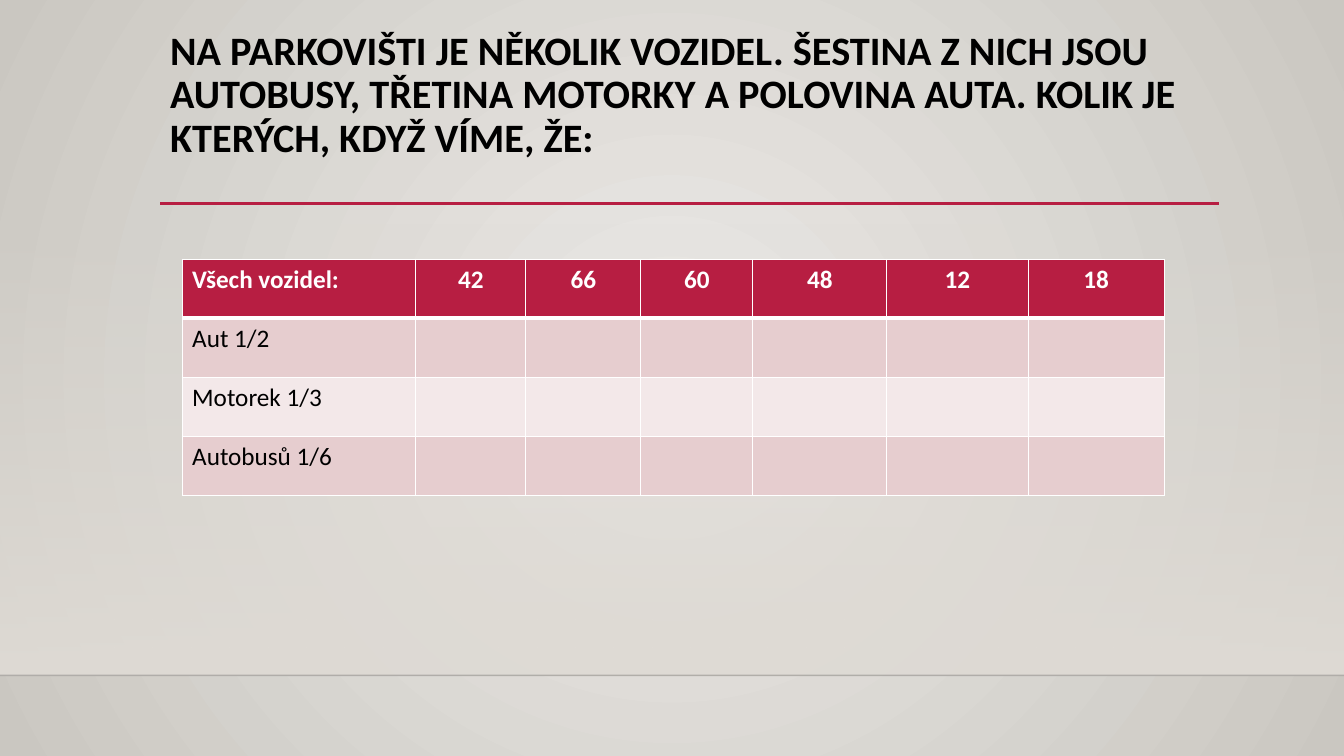
"""Build a slide with a word problem about vehicles in a car park and a table to fill in."""
from pptx import Presentation
from pptx.dml.color import RGBColor
from pptx.enum.shapes import MSO_CONNECTOR, MSO_SHAPE
from pptx.enum.text import MSO_ANCHOR, PP_ALIGN
from pptx.oxml import parse_xml
from pptx.oxml.ns import nsdecls, qn
from pptx.oxml.xmlchemy import OxmlElement
from pptx.util import Cm, Pt

QUESTION = ("NA PARKOVIŠTI JE NĚKOLIK VOZIDEL. ŠESTINA Z NICH JSOU AUTOBUSY, "
            "TŘETINA MOTORKY A POLOVINA AUTA. KOLIK JE KTERÝCH, KDYŽ VÍME, ŽE:")
TOTALS = ["Všech vozidel:", "42", "66", "60", "48", "12", "18"]
SHARES = ["Aut 1/2", "Motorek 1/3", "Autobusů 1/6"]
COLUMN_WIDTHS = [5.89, 2.77, 2.9, 2.82, 3.38, 3.56, 3.43]
ROW_HEIGHT = 1.49
SLIDE_WIDTH, SLIDE_HEIGHT = 33.87, 19.05
FLOOR_TOP = 17.02
FONT = "Calibri"
COLORS = {
    "center": "ECEAE7", "edge": "CAC7C1", "wall": "DFDBD5", "floor": "000001",
    "accent": "B71E42", "text": "000000", "white": "FFFFFF",
    "odd": "E6CDCF", "even": "F3E8E9",
}
RADIAL = ('<a:path path="circle"><a:fillToRect l="50000" t="50000" '
          'r="50000" b="50000"/></a:path>')
DOWNWARD = '<a:lin ang="5400000" scaled="0"/>'


def rgb(name):
    return RGBColor.from_string(COLORS[name])


def set_gradient(parent, start, end, direction, start_alpha=100):
    solid = parent.find(".//" + qn("a:solidFill"))
    gradient = parse_xml(
        f'<a:gradFill {nsdecls("a")} rotWithShape="1"><a:gsLst>'
        f'<a:gs pos="0"><a:srgbClr val="{COLORS[start]}">'
        f'<a:alpha val="{start_alpha * 1000}"/></a:srgbClr></a:gs>'
        f'<a:gs pos="100000"><a:srgbClr val="{COLORS[end]}"/></a:gs>'
        f'</a:gsLst>{direction}</a:gradFill>')
    solid.getparent().replace(solid, gradient)


def add_rule(slide, left, right, top, color, width):
    rule = slide.shapes.add_connector(
        MSO_CONNECTOR.STRAIGHT, Cm(left), Cm(top), Cm(right), Cm(top))
    rule.line.color.rgb = rgb(color)
    rule.line.width = Pt(width)
    rule._element.spPr.append(OxmlElement("a:effectLst"))
    return rule


def add_text(paragraph, text, size, color, bold):
    run = paragraph.add_run()
    run.text = text
    run.font.name = FONT
    run.font.size = Pt(size)
    run.font.bold = bold
    run.font.color.rgb = rgb(color)


def set_borders(cell, top, bottom):
    widths = {"L": 1, "R": 1, "T": top, "B": bottom}
    for place, (side, width) in enumerate(widths.items()):
        cell._tc.get_or_add_tcPr().insert(place, parse_xml(
            f'<a:ln{side} {nsdecls("a")} w="{Pt(width)}"><a:solidFill>'
            f'<a:srgbClr val="{COLORS["white"]}"/></a:solidFill></a:ln{side}>'))


def add_backdrop(slide):
    slide.background.fill.solid()
    set_gradient(slide._element, "center", "edge", RADIAL)
    wall_top = 5.61
    wall = slide.shapes.add_shape(
        MSO_SHAPE.RECTANGLE, 0, Cm(wall_top), Cm(SLIDE_WIDTH), Cm(FLOOR_TOP - wall_top))
    wall.shadow.inherit = False
    wall.line.fill.background()
    wall.fill.solid()
    wall.fill.fore_color.rgb = rgb("wall")
    set_gradient(wall._element.spPr, "wall", "wall", DOWNWARD, start_alpha=0)
    floor = add_rule(slide, 0, SLIDE_WIDTH, FLOOR_TOP, "floor", 1)
    alpha = OxmlElement("a:alpha")
    alpha.set("val", "20000")
    floor._element.spPr.find(".//" + qn("a:srgbClr")).append(alpha)


def add_question(slide):
    add_rule(slide, 4.04, 30.73, 5.13, "accent", 2.5)
    question = slide.shapes.add_textbox(Cm(4.04), Cm(0.64), Cm(26.67), Cm(4.52)).text_frame
    question.word_wrap = True
    question.vertical_anchor = MSO_ANCHOR.TOP
    question.paragraphs[0].line_spacing = 0.9
    add_text(question.paragraphs[0], QUESTION, 28.8, "text", True)


def add_vehicle_table(slide):
    rows = [TOTALS] + [[share] + [""] * (len(TOTALS) - 1) for share in SHARES]
    vehicles = slide.shapes.add_table(
        len(rows), len(TOTALS), Cm(4.59), Cm(6.53),
        Cm(sum(COLUMN_WIDTHS)), Cm(ROW_HEIGHT * len(rows))).table
    for column, width in zip(vehicles.columns, COLUMN_WIDTHS):
        column.width = Cm(width)
    for r, row in enumerate(rows):
        vehicles.rows[r].height = Cm(ROW_HEIGHT)
        header = r == 0
        fill = "accent" if header else "odd" if r % 2 else "even"
        for c, text in enumerate(row):
            cell = vehicles.cell(r, c)
            cell.fill.solid()
            cell.fill.fore_color.rgb = rgb(fill)
            set_borders(cell, 3 if r == 1 else 1, 3 if header else 1)
            paragraph = cell.text_frame.paragraphs[0]
            paragraph.alignment = PP_ALIGN.CENTER if c else PP_ALIGN.LEFT
            if text:
                add_text(paragraph, text, 18, "white" if header else "text", header)


def main():
    deck = Presentation()
    deck.slide_width, deck.slide_height = Cm(SLIDE_WIDTH), Cm(SLIDE_HEIGHT)
    slide = deck.slides.add_slide(deck.slide_layouts[6])
    add_backdrop(slide)
    add_question(slide)
    add_vehicle_table(slide)
    deck.save("out.pptx")


if __name__ == "__main__":
    main()
